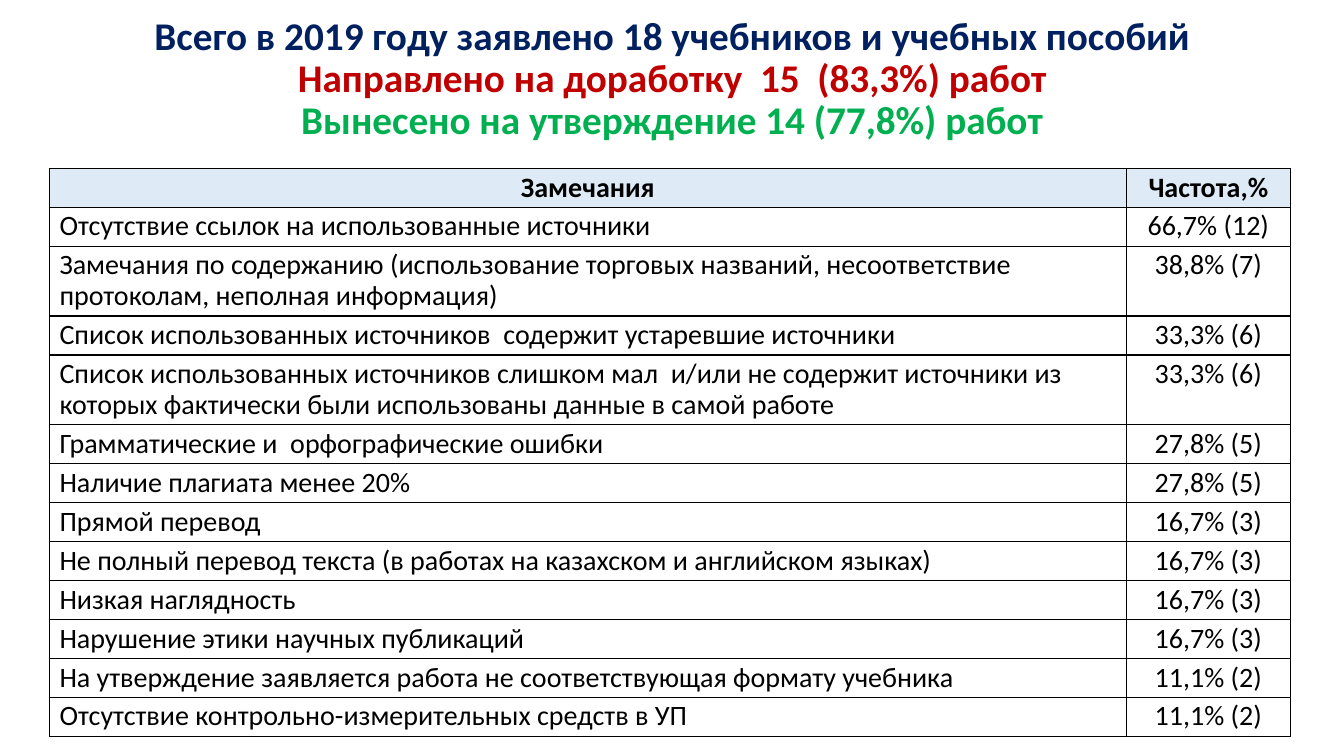
"""Build a slide on the review remarks for textbooks submitted in 2019."""
import pptx
import pptx.util
import pptx.dml.color
import pptx.enum.text
import pptx.oxml
import pptx.oxml.ns

Inches = pptx.util.Inches
Pt = pptx.util.Pt
RGB = pptx.dml.color.RGBColor.from_string
ALIGN = pptx.enum.text.PP_ALIGN
ANCHOR = pptx.enum.text.MSO_ANCHOR
COLORS = {"navy": "002060", "red": "C00000", "green": "00B050",
          "black": "000000", "white": "FFFFFF", "head": "DEEBF7"}


def add_run(para, text, size, color, bold):
    run = para.add_run()
    run.text = text
    run.font.name = "Calibri"
    run.font.size = Pt(size)
    run.font.bold = bold
    run.font.color.rgb = RGB(COLORS[color])


def add_lines(cell):
    props = cell._tc.get_or_add_tcPr()
    for side in ("lnL", "lnR", "lnT", "lnB"):
        props.append(pptx.oxml.parse_xml(
            f'<a:{side} {pptx.oxml.ns.nsdecls("a")} w="{Pt(1)}"><a:solidFill>'
            f'<a:srgbClr val="{COLORS["black"]}"/></a:solidFill></a:{side}>'))


deck = pptx.Presentation()
deck.slide_width = Inches(13.33)
deck.slide_height = Inches(7.5)
slide = deck.slides.add_slide(deck.slide_layouts[5])

title = slide.shapes.title
title.left, title.top = Inches(0), Inches(0.02)
title.width, title.height = Inches(13.33), Inches(1.54)
frame = title.text_frame
frame.word_wrap = True
frame.auto_size = pptx.enum.text.MSO_AUTO_SIZE.NONE
frame.vertical_anchor = ANCHOR.MIDDLE
para = frame.paragraphs[0]
para.alignment = ALIGN.CENTER
para.line_spacing = 0.9
heads = [
    ("Всего в 2019 году заявлено 18 учебников и учебных пособий", "navy"),
    ("Направлено на доработку  15  (83,3%) работ", "red"),
    ("Вынесено на утверждение 14 (77,8%) работ", "green"),
]
for num, (text, color) in enumerate(heads):
    if num:
        para.add_line_break()
    add_run(para, text, 28, color, True)

rows = [
    ("Замечания", "Частота,%"),
    ("Отсутствие ссылок на использованные источники", "66,7% (12)"),
    ("Замечания по содержанию (использование торговых названий, "
     "несоответствие протоколам, неполная информация)", "38,8% (7)"),
    ("Список использованных источников  содержит устаревшие источники",
     "33,3% (6)"),
    ("Список использованных источников слишком мал  и/или не содержит "
     "источники из которых фактически были использованы данные в самой работе",
     "33,3% (6)"),
    ("Грамматические и  орфографические ошибки", "27,8% (5)"),
    ("Наличие плагиата менее 20%", "27,8% (5)"),
    ("Прямой перевод", "16,7% (3)"),
    ("Не полный перевод текста (в работах на казахском и английском языках)",
     "16,7% (3)"),
    ("Низкая наглядность", "16,7% (3)"),
    ("Нарушение этики научных публикаций", "16,7% (3)"),
    ("На утверждение заявляется работа не соответствующая формату учебника",
     "11,1% (2)"),
    ("Отсутствие контрольно-измерительных средств в УП", "11,1% (2)"),
]
table = slide.shapes.add_table(len(rows), 2, Inches(0.49), Inches(1.67),
                               Inches(12.31), Inches(5.52)).table
table.columns[0].width = Inches(10.68)
table.columns[1].width = Inches(1.63)
for row, texts in enumerate(rows):
    table.rows[row].height = Inches(0.69 if len(texts[0]) > 90 else 0.38)
    for col, text in enumerate(texts):
        cell = table.cell(row, col)
        cell.margin_left = cell.margin_right = Inches(0.1)
        cell.margin_top = cell.margin_bottom = Inches(0.04)
        add_lines(cell)
        cell.fill.solid()
        cell.fill.fore_color.rgb = RGB(COLORS["white" if row else "head"])
        para = cell.text_frame.paragraphs[0]
        para.alignment = ALIGN.LEFT if row and col == 0 else ALIGN.CENTER
        para.line_spacing = 0.9
        add_run(para, text, 20, "black", row == 0)

deck.save("out.pptx")
